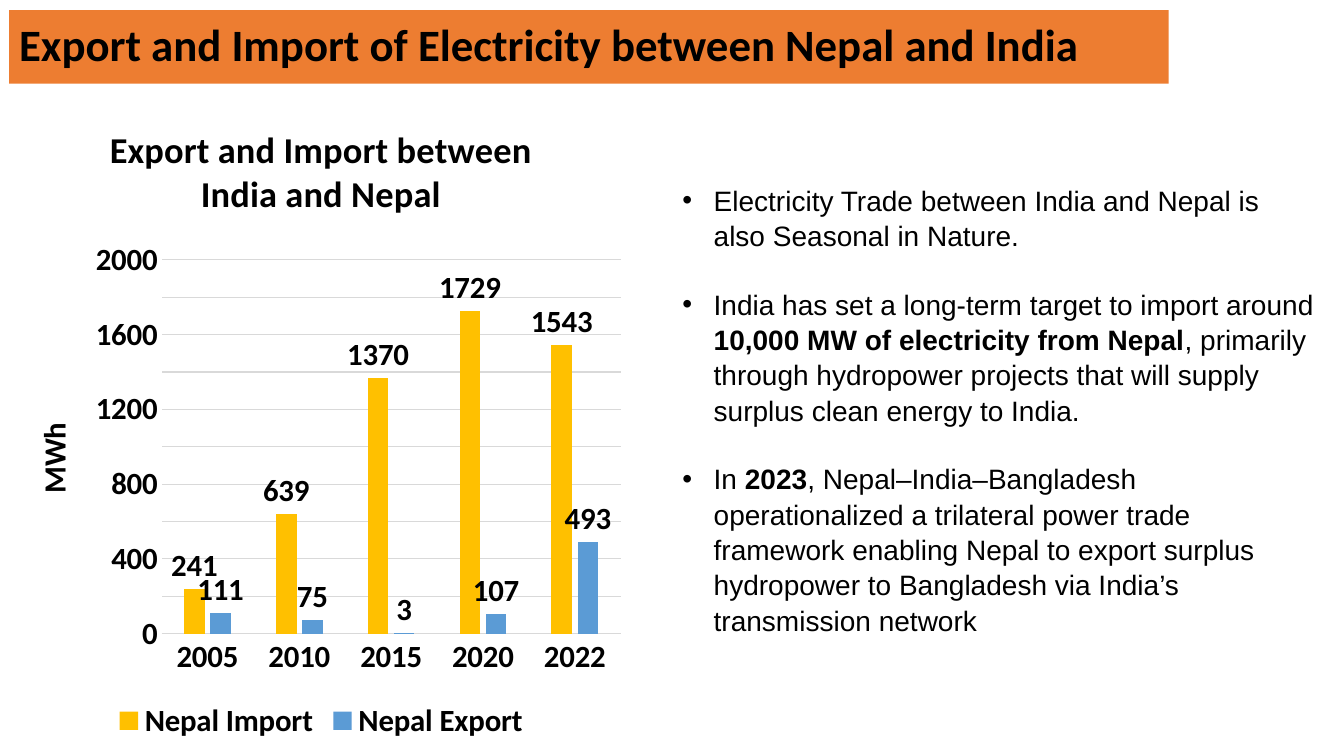
from pptx import Presentation
from pptx.chart.data import CategoryChartData
from pptx.dml.color import RGBColor
from pptx.enum.chart import XL_CHART_TYPE as ChartType, XL_LABEL_POSITION as LabelPosition
from pptx.enum.chart import XL_LEGEND_POSITION as LegendPosition, XL_TICK_MARK as TickMark
from pptx.enum.text import MSO_ANCHOR as Anchor, PP_ALIGN as Align
from pptx.oxml import parse_xml
from pptx.oxml.ns import nsdecls
from pptx.util import Pt

PX = 9144
YEARS = ["2005", "2010", "2015", "2020", "2022"]
TRADE = [
    ("Nepal Import", [241, 639, 1370, 1729, 1543], "FFC000"),
    ("Nepal Export", [111, 75, 3, 107, 493], "5B9BD5"),
]
POINTS = [
    [("Electricity Trade between India and Nepal is also Seasonal in Nature.", False)],
    [
        ("India has set a long-term target to import around ", False),
        ("10,000 MW of electricity from Nepal", True),
        (", primarily through hydropower projects that will supply surplus clean "
         "energy to India.", False),
    ],
    [
        ("In ", False),
        ("2023", True),
        (", Nepal–India–Bangladesh operationalized a trilateral power trade framework "
         "enabling Nepal to export surplus hydropower to Bangladesh via India’s "
         "transmission network", False),
    ],
]


def px(*lengths):
    """Turn pixel lengths into EMU."""
    return [length * PX for length in lengths]


def paint(target, color):
    """Give a fill, or the fill of a line, one solid colour."""
    target.solid()
    target.fore_color.rgb = RGBColor.from_string(color)


def style(font, size=22, name="Calibri", bold=True, color="000000"):
    """Set size, face, weight and colour of a font."""
    font.size, font.name, font.bold = Pt(size), name, bold
    font.color.rgb = RGBColor.from_string(color)


def write(para, text, **look):
    """Add a formatted run to a paragraph."""
    span = para.add_run()
    span.text = text
    style(span.font, **look)


def add_heading(page, box):
    """Place the orange title bar."""
    title = page.shapes.title
    title.left, title.top, title.width, title.height = px(*box)
    paint(title.fill, "ED7D31")
    frame = title.text_frame
    frame.word_wrap = True
    frame.vertical_anchor = Anchor.MIDDLE
    para = frame.paragraphs[0]
    para.alignment, para.line_spacing = Align.LEFT, 0.9
    write(para, "Export and Import of Electricity between Nepal and India", size=32)


def format_axes(chart):
    """Format the year axis and the energy axis."""
    years, energy = chart.category_axis, chart.value_axis
    for axis in (years, energy):
        axis.major_tick_mark = axis.minor_tick_mark = TickMark.NONE
        style(axis.tick_labels.font)
    energy.minimum_scale, energy.maximum_scale, energy.major_unit = 0, 2000, 200
    energy.format.line.fill.background()
    for line in (years.format.line, energy.major_gridlines.format.line):
        paint(line.fill, "D9D9D9")
        line.width = Pt(0.75)
    write(energy.axis_title.text_frame.paragraphs[0], "MWh")


def add_trade_chart(page, box):
    """Place the column chart of yearly imports and exports."""
    data = CategoryChartData()
    data.categories = YEARS
    for name, values, _ in TRADE:
        data.add_series(name, values)
    chart = page.shapes.add_chart(ChartType.COLUMN_CLUSTERED, *px(*box), data).chart
    style(chart.font)
    write(chart.chart_title.text_frame.paragraphs[0],
          "Export and Import between India and Nepal", size=26)
    chart.chart_title.include_in_layout = False
    chart.has_legend = True
    chart.legend.position = LegendPosition.BOTTOM
    chart.legend.include_in_layout = False
    style(chart.legend.font)
    format_axes(chart)
    plot = chart.plots[0]
    plot.gap_width, plot.overlap, plot.vary_by_categories = 219, -27, False
    for series, (_, _, color) in zip(plot.series, TRADE):
        paint(series.format.fill, color)
        labels = series.data_labels
        labels.show_value, labels.position = True, LabelPosition.OUTSIDE_END
        style(labels.font)


def add_points(page, box):
    """Place the bulleted remarks."""
    frame = page.shapes.add_textbox(*px(*box)).text_frame
    frame.word_wrap = True
    for index, spans in enumerate(POINTS):
        para = frame.add_paragraph() if index else frame.paragraphs[0]
        props = para._p.get_or_add_pPr()
        indent, = px(31)
        props.set("marL", str(indent))
        props.set("indent", str(-indent))
        props.append(parse_xml(f'<a:buFont {nsdecls("a")} typeface="Arial"/>'))
        props.append(parse_xml(f'<a:buChar {nsdecls("a")} char="•"/>'))
        para.line_spacing = 1.05
        if index:
            para.space_before = Pt(24)
        for text, bold in spans:
            write(para, text, size=20, name="Arial", bold=bold)


def main():
    """Build and save the slide."""
    deck = Presentation()
    deck.slide_width, deck.slide_height = px(1333, 750)
    page = deck.slides.add_slide(deck.slide_layouts[5])
    add_heading(page, (9, 10, 1150, 73))
    add_trade_chart(page, (9, 99, 619, 641))
    add_points(page, (667, 175, 649, 448))
    deck.save("out.pptx")


if __name__ == "__main__":
    main()
